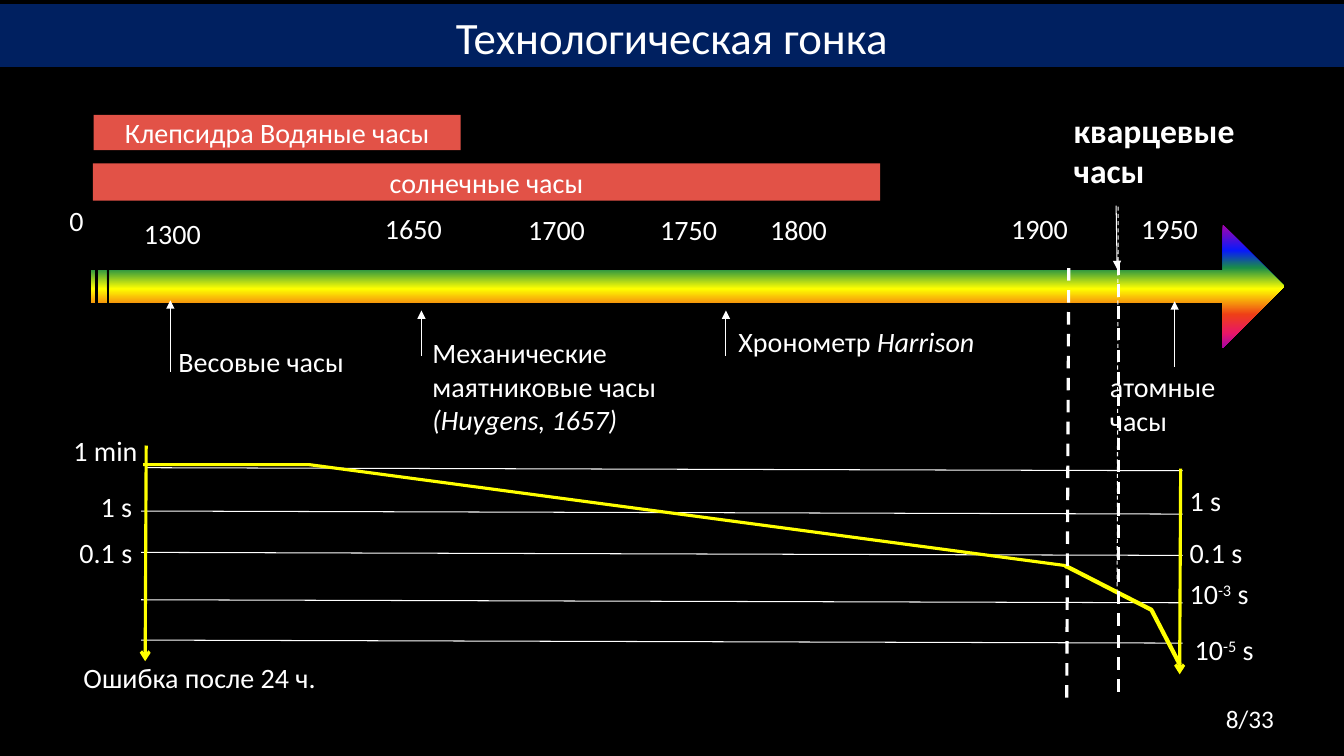
from lxml.etree import SubElement
from pptx import Presentation
from pptx.dml.color import RGBColor
from pptx.enum.dml import MSO_LINE
from pptx.enum.shapes import MSO_CONNECTOR, MSO_SHAPE
from pptx.enum.text import MSO_ANCHOR, PP_ALIGN
from pptx.oxml.ns import qn
from pptx.util import Inches, Pt

WHITE, BLACK, YELLOW, RED, NAVY = "FFFFFF", "000000", "FFFF00", "E25247", "002060"
RAINBOW = [(0, "A603AB"), (21, "0819FB"), (35, "1A8D48"), (52, YELLOW),
           (73, "EE3F17"), (88, "E81766"), (100, "A603AB")]


def color(value):
    """Turn a hex string into a colour."""
    return RGBColor.from_string(value)


class TimelineSlide:
    """Draws styled elements on one slide."""

    def __init__(self, presentation):
        """Add a title-only slide with a black background."""
        self.slide = presentation.slides.add_slide(presentation.slide_layouts[5])
        self.shapes = self.slide.shapes
        self.slide.background.fill.solid()
        self.slide.background.fill.fore_color.rgb = color(BLACK)

    def set_text(self, shape, paragraphs, size=20, align=PP_ALIGN.LEFT, bold=False):
        """Fill a shape with paragraphs, each a list of (text, style) runs."""
        frame = shape.text_frame
        for index, runs in enumerate(paragraphs):
            paragraph = frame.add_paragraph() if index else frame.paragraphs[0]
            paragraph.alignment = align
            font = paragraph.font
            font.name, font.size, font.bold = "Calibri", Pt(size), bold
            font.color.rgb = color(WHITE)
            for text, style in runs:
                run = paragraph.add_run()
                run.text = text
                if style == "italic":
                    run.font.italic = True
                elif style == "super":
                    run.font._element.set("baseline", "30000")

    def title(self, text, left, top, width, height):
        """Place the title as a navy banner."""
        title = self.shapes.title
        title.left, title.top = Inches(left), Inches(top)
        title.width, title.height = Inches(width), Inches(height)
        title.fill.solid()
        title.fill.fore_color.rgb = color(NAVY)
        title.text_frame.vertical_anchor = MSO_ANCHOR.MIDDLE
        self.set_text(title, [[(text, None)]], 32, PP_ALIGN.CENTER)

    def text(self, paragraphs, left, top, width, height=0.44, wrap=True,
             anchor=MSO_ANCHOR.TOP, **style):
        """Add a text box from a plain string or a list of paragraphs."""
        if isinstance(paragraphs, str):
            paragraphs = [[(paragraphs, None)]]
        box = self.shapes.add_textbox(Inches(left), Inches(top), Inches(width), Inches(height))
        box.text_frame.word_wrap = wrap
        box.text_frame.vertical_anchor = anchor
        self.set_text(box, paragraphs, **style)

    def bar(self, text, left, top, width, height):
        """Add a red bar with a centred label."""
        bar = self.shapes.add_shape(MSO_SHAPE.RECTANGLE, Inches(left), Inches(top),
                                    Inches(width), Inches(height))
        bar.shadow.inherit = False
        bar.fill.solid()
        bar.fill.fore_color.rgb = color(RED)
        bar.line.fill.background()
        bar.text_frame.vertical_anchor = MSO_ANCHOR.MIDDLE
        self.set_text(bar, [[(text, None)]], align=PP_ALIGN.CENTER)

    def time_arrow(self, left, top, width, height):
        """Add the striped rainbow arrow."""
        arrow = self.shapes.add_shape(MSO_SHAPE.STRIPED_RIGHT_ARROW, Inches(left), Inches(top),
                                      Inches(width), Inches(height))
        arrow.shadow.inherit = False
        arrow.adjustments[0], arrow.adjustments[1] = 0.263, 0.5
        arrow.line.fill.background()
        arrow.fill.gradient()
        arrow.fill.gradient_angle = 270
        stops = arrow._element.spPr.find(qn("a:gradFill")).find(qn("a:gsLst"))
        for stop in list(stops):
            stops.remove(stop)
        for percent, value in RAINBOW:
            stop = SubElement(stops, qn("a:gs"), pos=str(percent * 1000))
            SubElement(stop, qn("a:srgbClr"), val=value)

    def line(self, start, end, value=WHITE, width=0.75, tip=None, dashed=False):
        """Add a straight line, with an arrowhead at its end if asked."""
        line = self.shapes.add_connector(MSO_CONNECTOR.STRAIGHT, *map(Inches, start + end))
        line.line.color.rgb = color(value)
        line.line.width = Pt(width)
        if dashed:
            line.line.dash_style = MSO_LINE.DASH
        if tip:
            SubElement(line.line._get_or_add_ln(), qn("a:tailEnd"), type=tip)
        SubElement(line._element.spPr, qn("a:effectLst"))

    def curve(self, points, width):
        """Add an open yellow polyline."""
        start, *rest = [(Inches(x), Inches(y)) for x, y in points]
        builder = self.shapes.build_freeform(*start)
        builder.add_line_segments(rest, close=False)
        curve = builder.convert_to_shape()
        curve.shadow.inherit = False
        curve.fill.background()
        curve.line.color.rgb = color(YELLOW)
        curve.line.width = Pt(width)


def main():
    """Build and save the slide."""
    presentation = Presentation()
    presentation.slide_width, presentation.slide_height = Inches(13.33), Inches(7.5)
    slide = TimelineSlide(presentation)
    slide.title("Технологическая гонка", 0, 0.04, 13.33, 0.64)
    slide.line((0, 0.69), (13.33, 0.69), BLACK, 3)

    slide.bar("Клепсидра Водяные часы", 0.93, 1.14, 3.64, 0.35)
    slide.bar("солнечные часы", 0.92, 1.62, 7.81, 0.37)
    slide.time_arrow(0.9, 2.23, 11.84, 1.22)

    for tick in (0.92, 4.09, 5.57, 6.91, 7.97, 10.36, 11.65):
        slide.line((tick, 2.68), (tick, 2.56), BLACK, 1.5)
    slide.text("0", 0.59, 1.97, 0.34, wrap=False)
    for year, left, top in (("1300", 1.33, 2.1), ("1650", 3.72, 2.05), ("1700", 5.14, 2.06),
                            ("1750", 6.45, 2.06), ("1800", 7.54, 2.06), ("1900", 9.93, 2.05),
                            ("1950", 11.22, 2.05)):
        slide.text(year, left, top, 0.77, wrap=False)

    for x, bottom, top in ((1.69, 3.69, 2.98), (4.18, 3.53, 3.08),
                           (7.2, 3.53, 3.08), (11.65, 3.64, 2.99)):
        slide.line((x, bottom), (x, top), tip="triangle")
    slide.line((11.07, 2.04), (11.08, 2.67), tip="triangle")

    middle = MSO_ANCHOR.MIDDLE
    slide.text("кварцевые часы", 10.55, 1.04, 1.88, 0.91, size=24, bold=True)
    slide.text("Весовые часы", 1.07, 3.38, 3.04, 0.41, anchor=middle, align=PP_ALIGN.CENTER)
    slide.text([[("Механические маятниковые часы", None)], [("(Huygens, 1657)", "italic")]],
               4.19, 3.28, 2.97, 1.1, anchor=middle)
    slide.text([[("Хронометр", None), (" Harrison", "italic")]], 6.96, 3.18, 3.07, 0.41,
               anchor=middle, align=PP_ALIGN.CENTER)
    slide.text("атомные часы", 10.91, 3.62, 1.59, 0.77)

    for left, top in ((1.44, 4.64), (1.4, 5.07), (1.4, 5.48), (1.4, 5.95), (1.4, 6.35)):
        slide.line((left, top), (11.73, top + 0.03))
    slide.line((1.45, 4.42), (1.44, 6.56), YELLOW, 2.25, tip="arrow")
    slide.line((11.71, 4.65), (11.7, 6.69), YELLOW, 2.25, tip="arrow")
    slide.curve([(1.42, 4.61), (3.07, 4.61), (10.56, 5.61), (10.58, 5.63)], 2.25)
    slide.curve([(10.58, 5.62), (11.42, 6.05), (11.7, 6.59)], 3)

    for label, left, top, width in (("1 min", 0.63, 4.25, 0.84), ("1 s", 0.9, 4.81, 0.52),
                                    ("0.1 s", 0.69, 5.26, 0.73), ("1 s", 11.7, 4.75, 0.52),
                                    ("0.1 s", 11.7, 5.26, 0.73)):
        slide.text(label, left, top, width, wrap=False)
    for exponent, left, top in (("-3", 11.7, 5.67), ("-5", 11.75, 6.23)):
        slide.text([[("10", None), (exponent, "super"), (" s", None)]], left, top, 0.81, wrap=False)
    slide.text("Ошибка после 24 ч.", 0.73, 6.5, 3.07)

    slide.line((11.09, 2.05), (11.08, 5.86), dashed=True)
    slide.line((10.6, 2.66), (10.58, 6.94), width=2.25, dashed=True)
    slide.line((11.09, 2.6), (11.09, 6.93), width=2.25, dashed=True)
    slide.text("8/33", 12.06, 6.93, 0.96, 0.41, size=18)
    presentation.save("out.pptx")


if __name__ == "__main__":
    main()
